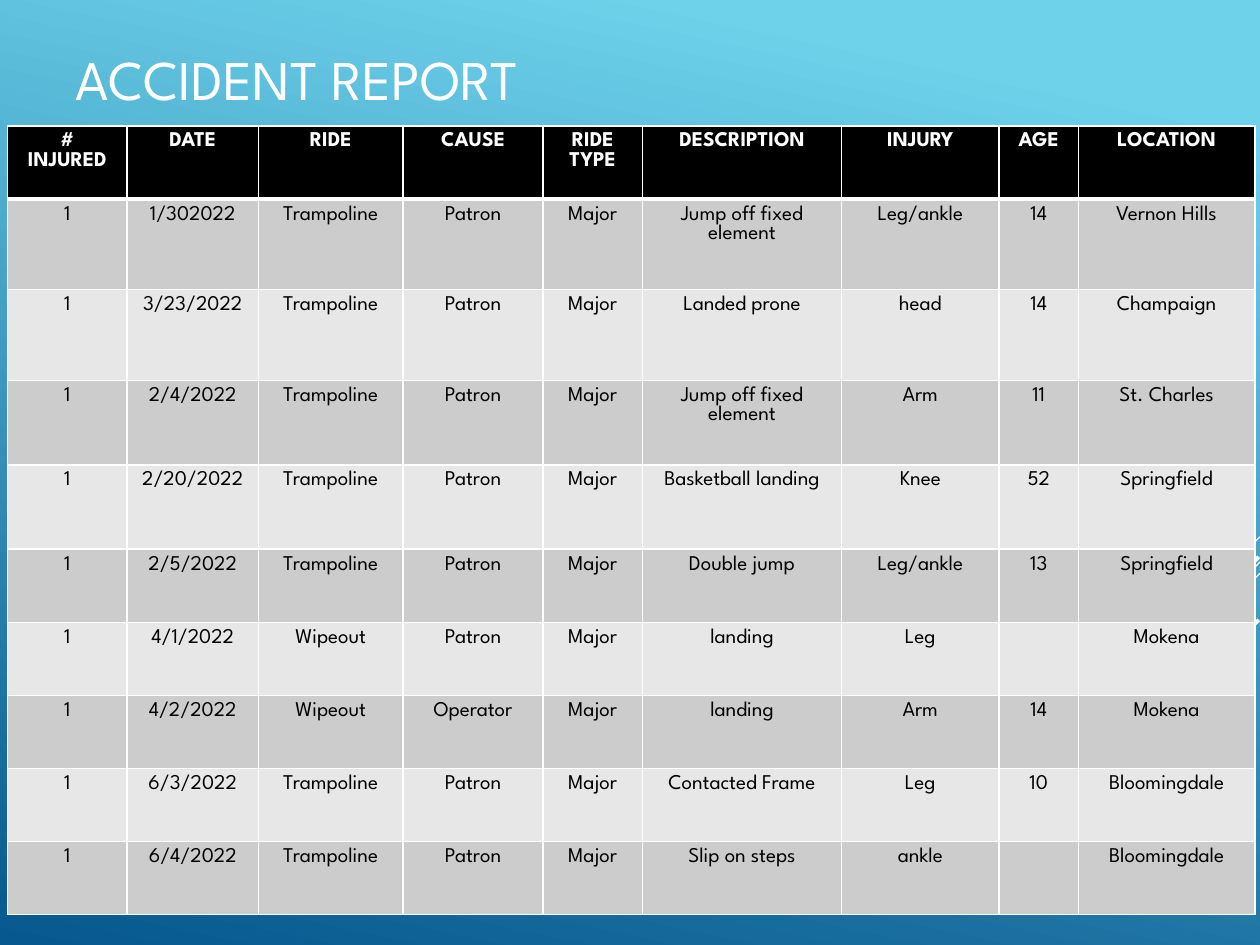
from lxml import etree
from pptx import Presentation
from pptx.dml.color import RGBColor
from pptx.enum.shapes import MSO_CONNECTOR
from pptx.enum.text import MSO_ANCHOR, PP_ALIGN
from pptx.oxml.ns import qn
from pptx.util import Inches, Pt

STRAIGHT = MSO_CONNECTOR.STRAIGHT
MIDDLE = MSO_ANCHOR.MIDDLE
CENTER = PP_ALIGN.CENTER

FONT = "League Spartan"
WHITE = RGBColor(0xFF, 0xFF, 0xFF)
BLACK = RGBColor(0x00, 0x00, 0x00)
DARK_BAND = RGBColor(0xCC, 0xCC, 0xCC)
LIGHT_BAND = RGBColor(0xE7, 0xE7, 0xE7)
SKY = RGBColor(0x6E, 0xD2, 0xEB)
OCEAN = RGBColor(0x06, 0x58, 0x8E)

# Start x, start y, end x, end y, width in points
DIAGONALS = [
    (10, 4.26, 9.17, 5.09, 0.75),
    (10, 4.46, 7.3, 7.17, 0.75),
    (10, 4.55, 8.28, 6.27, 0.75),
    (9.99, 4.42, 8.42, 5.99, 2.25),
    (9.99, 4.92, 8.85, 6.06, 2.25),
]

COLUMN_WIDTHS = [0.95, 1.04, 1.15, 1.11, 0.79, 1.58, 1.25, 0.63, 1.4]
ROW_HEIGHTS = [0.58, 0.72, 0.72, 0.67, 0.67] + [0.58] * 5

HEADINGS = ["# INJURED", "DATE", "RIDE", "CAUSE", "RIDE TYPE",
            "DESCRIPTION", "INJURY", "AGE", "LOCATION"]
ACCIDENTS = [
    ["1", "1/302022", "Trampoline", "Patron", "Major",
     "Jump off fixed element", "Leg/ankle", "14", "Vernon Hills"],
    ["1", "3/23/2022", "Trampoline", "Patron", "Major",
     "Landed prone", "head", "14", "Champaign"],
    ["1", "2/4/2022", "Trampoline", "Patron", "Major",
     "Jump off fixed element", "Arm", "11", "St. Charles"],
    ["1", "2/20/2022", "Trampoline", "Patron", "Major",
     "Basketball landing", "Knee", "52", "Springfield"],
    ["1", "2/5/2022", "Trampoline", "Patron", "Major",
     "Double jump", "Leg/ankle", "13", "Springfield"],
    ["1", "4/1/2022", "Wipeout", "Patron", "Major",
     "landing", "Leg", "", "Mokena"],
    ["1", "4/2/2022", "Wipeout", "Operator", "Major",
     "landing", "Arm", "14", "Mokena"],
    ["1", "6/3/2022", "Trampoline", "Patron", "Major",
     "Contacted Frame", "Leg", "10", "Bloomingdale"],
    ["1", "6/4/2022", "Trampoline", "Patron", "Major",
     "Slip on steps", "ankle", "", "Bloomingdale"],
]


def paint_background(slide):
    fill = slide.background.fill
    fill.gradient()
    fill.gradient_angle = 258
    for stop, color, position in zip(fill.gradient_stops, (SKY, OCEAN), (0.1, 1)):
        stop.color.rgb = color
        stop.position = position


def add_diagonal(slide, x1, y1, x2, y2, width):
    line = slide.shapes.add_connector(
        STRAIGHT, Inches(x1), Inches(y1), Inches(x2), Inches(y2))
    line.line.color.rgb = WHITE
    line.line.width = Pt(width)
    etree.SubElement(line._element.spPr, qn("a:effectLst"))


def add_span(para, text, size, color, bold=False):
    span = para.add_run()
    span.text = text
    span.font.name = FONT
    span.font.size = Pt(size)
    span.font.bold = bold
    span.font.color.rgb = color


def add_title(slide, text):
    box = slide.shapes.add_textbox(Inches(0.5), Inches(0.08), Inches(9), Inches(1.08))
    frame = box.text_frame
    frame.word_wrap = True
    frame.vertical_anchor = MIDDLE
    add_span(frame.paragraphs[0], text, 32, WHITE)


def add_borders(cell, top, bottom):
    """Draw white borders; they must come before the fill in the cell's XML."""
    properties = cell._tc.get_or_add_tcPr()
    for side, width in (("L", 1), ("R", 1), ("T", top), ("B", bottom)):
        border = etree.SubElement(properties, qn(f"a:ln{side}"), w=str(Pt(width)))
        fill = etree.SubElement(border, qn("a:solidFill"))
        etree.SubElement(fill, qn("a:srgbClr"), val=str(WHITE))


def fill_cell(cell, text, row):
    header = row == 0
    add_borders(cell, top=3 if row == 1 else 1, bottom=3 if header else 1)
    cell.fill.solid()
    if header:
        cell.fill.fore_color.rgb = BLACK
    else:
        cell.fill.fore_color.rgb = DARK_BAND if row % 2 else LIGHT_BAND
    para = cell.text_frame.paragraphs[0]
    para.alignment = CENTER
    if text:
        add_span(para, text, 12, WHITE if header else BLACK, bold=header)


def add_accident_table(slide):
    records = [HEADINGS] + ACCIDENTS
    table = slide.shapes.add_table(
        len(records), len(HEADINGS), Inches(0.06), Inches(1),
        Inches(sum(COLUMN_WIDTHS)), Inches(sum(ROW_HEIGHTS))).table
    for column, width in zip(table.columns, COLUMN_WIDTHS):
        column.width = Inches(width)
    for row, height in zip(table.rows, ROW_HEIGHTS):
        row.height = Inches(height)
    for row, record in enumerate(records):
        for column, text in enumerate(record):
            fill_cell(table.cell(row, column), text, row)


def main():
    deck = Presentation()
    deck.slide_width = Inches(10)
    deck.slide_height = Inches(7.5)
    page = deck.slides.add_slide(deck.slide_layouts[6])
    paint_background(page)
    for diagonal in DIAGONALS:
        add_diagonal(page, *diagonal)
    add_title(page, "ACCIDENT REPORT")
    add_accident_table(page)
    deck.save("out.pptx")


if __name__ == "__main__":
    main()
